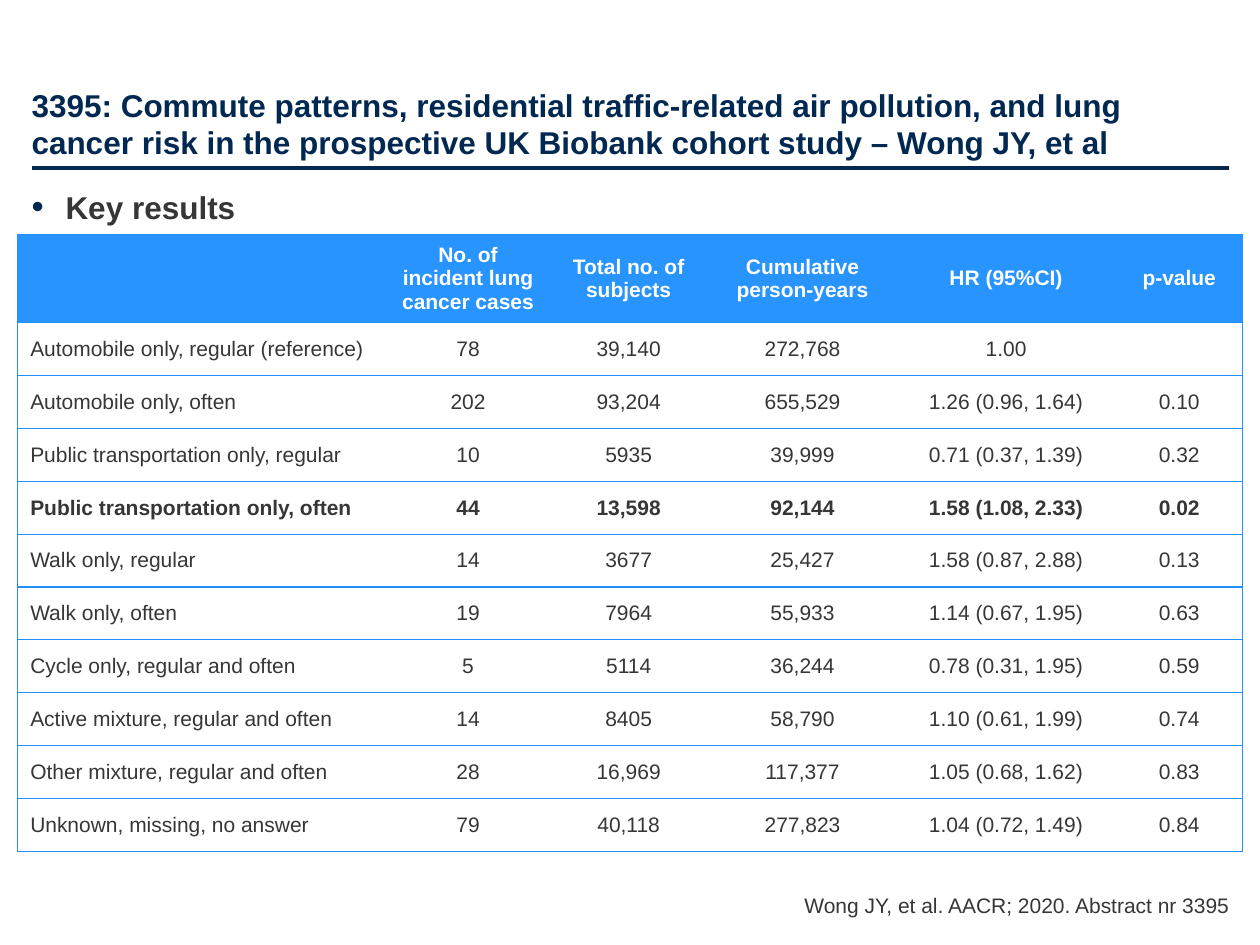
from lxml import etree
from pptx import Presentation
from pptx.dml.color import RGBColor
from pptx.enum.shapes import MSO_CONNECTOR
from pptx.enum.text import MSO_ANCHOR, MSO_AUTO_SIZE, PP_ALIGN
from pptx.oxml.ns import qn
from pptx.util import Inches, Pt

LEFT, CENTER, RIGHT = PP_ALIGN.LEFT, PP_ALIGN.CENTER, PP_ALIGN.RIGHT
TOP, MIDDLE, BOTTOM = MSO_ANCHOR.TOP, MSO_ANCHOR.MIDDLE, MSO_ANCHOR.BOTTOM
NO_FIT, GROW = MSO_AUTO_SIZE.NONE, MSO_AUTO_SIZE.SHAPE_TO_FIT_TEXT
STRAIGHT = MSO_CONNECTOR.STRAIGHT

COLORS = {"navy": "002850", "text": "363636", "header": "2894FF",
          "border": "2291FF", "white": "FFFFFF"}
FONT = "Arial"
PLAIN_TABLE_STYLE = "{2D5ABB26-0587-4C30-8999-92F81FD0307C}"
COLUMN_WIDTHS = [2.94, 1.27, 1.28, 1.48, 1.75, 1]
HEADER_HEIGHT, ROW_HEIGHT = 0.7, 0.42
HIGHLIGHTED_ROW = 4
RESULTS = [
    ["", "No. of incident lung cancer cases", "Total no. of subjects",
     "Cumulative person-years", "HR (95%CI)", "p-value"],
    ["Automobile only, regular (reference)", "78", "39,140", "272,768", "1.00", ""],
    ["Automobile only, often", "202", "93,204", "655,529", "1.26 (0.96, 1.64)", "0.10"],
    ["Public transportation only, regular", "10", "5935", "39,999", "0.71 (0.37, 1.39)", "0.32"],
    ["Public transportation only, often", "44", "13,598", "92,144", "1.58 (1.08, 2.33)", "0.02"],
    ["Walk only, regular", "14", "3677", "25,427", "1.58 (0.87, 2.88)", "0.13"],
    ["Walk only, often", "19", "7964", "55,933", "1.14 (0.67, 1.95)", "0.63"],
    ["Cycle only, regular and often", "5", "5114", "36,244", "0.78 (0.31, 1.95)", "0.59"],
    ["Active mixture, regular and often", "14", "8405", "58,790", "1.10 (0.61, 1.99)", "0.74"],
    ["Other mixture, regular and often", "28", "16,969", "117,377", "1.05 (0.68, 1.62)", "0.83"],
    ["Unknown, missing, no answer", "79", "40,118", "277,823", "1.04 (0.72, 1.49)", "0.84"],
]


def color(name):
    """Return the named colour."""
    return RGBColor.from_string(COLORS[name])


def write_text(frame, text, size=12, ink="text", bold=False, align=LEFT):
    """Write one formatted paragraph and return it."""
    paragraph = frame.paragraphs[0]
    paragraph.alignment = align
    paragraph.font.size = Pt(size)
    if text:
        run = paragraph.add_run()
        run.text = text
        run.font.name, run.font.size, run.font.bold = FONT, Pt(size), bold
        run.font.color.rgb = color(ink)
    return paragraph


def place(shape, left, top, width, height):
    """Move and size a shape, in inches."""
    shape.left, shape.top = Inches(left), Inches(top)
    shape.width, shape.height = Inches(width), Inches(height)


def set_frame(frame, anchor, inset_top=0, inset_bottom=0, wrap=True, fit=NO_FIT):
    """Set the anchor, insets, wrapping and fit of a text frame."""
    frame.margin_left = frame.margin_right = 0
    frame.margin_top, frame.margin_bottom = Inches(inset_top), Inches(inset_bottom)
    frame.vertical_anchor = anchor
    frame.word_wrap = wrap
    frame.auto_size = fit


def add_bullet(paragraph, indent):
    """Give a paragraph a hanging navy bullet."""
    properties = paragraph._p.get_or_add_pPr()
    properties.set("marL", str(Inches(indent)))
    properties.set("indent", str(-Inches(indent)))
    bullet_color = etree.SubElement(properties, qn("a:buClr"))
    etree.SubElement(bullet_color, qn("a:srgbClr"), val=COLORS["navy"])
    etree.SubElement(properties, qn("a:buSzPct"), val="110000")
    etree.SubElement(properties, qn("a:buFont"), typeface=FONT)
    etree.SubElement(properties, qn("a:buChar"), char="•")


def add_title(slide, text):
    """Fill the title placeholder and underline it with a rule."""
    title = slide.shapes.title
    place(title, 0.25, 0.25, 9.5, 1.03)
    set_frame(title.text_frame, BOTTOM, inset_top=0.05)
    write_text(title.text_frame, text, size=18, ink="navy", bold=True)
    rule = slide.shapes.add_connector(STRAIGHT, Inches(0.25), Inches(1.33),
                                      Inches(9.75), Inches(1.33))
    rule.line.color.rgb = color("navy")
    rule.line.width = Pt(2.25)
    etree.SubElement(rule._element.spPr, qn("a:effectLst"))


def add_body(slide, text):
    """Fill the body placeholder with one bullet."""
    body = slide.placeholders[1]
    place(body, 0.25, 1.44, 9.5, 5.81)
    set_frame(body.text_frame, TOP, inset_top=0.05, inset_bottom=0.05)
    paragraph = write_text(body.text_frame, text, size=18, bold=True)
    paragraph.space_before, paragraph.space_after = Pt(0), Pt(6)
    add_bullet(paragraph, 0.27)


def add_citation(slide, text):
    """Add the right-aligned source line."""
    box = slide.shapes.add_textbox(Inches(6.35), Inches(7.08), Inches(3.41), Inches(0.2))
    set_frame(box.text_frame, BOTTOM, wrap=False, fit=GROW)
    write_text(box.text_frame, text, align=RIGHT)


def set_borders(cell, sides):
    """Draw thin borders on the given sides of a cell."""
    properties = cell._tc.get_or_add_tcPr()
    for side in sides:
        line = etree.SubElement(properties, qn(f"a:ln{side}"), w=str(Pt(0.75)))
        fill = etree.SubElement(line, qn("a:solidFill"))
        etree.SubElement(fill, qn("a:srgbClr"), val=COLORS["border"])


def format_cell(cell, text, row, column):
    """Write, border and fill one results cell."""
    is_header = row == 0
    write_text(cell.text_frame, text, ink="white" if is_header else "text",
               bold=is_header or row == HIGHLIGHTED_ROW,
               align=CENTER if is_header or column else LEFT)
    cell.vertical_anchor = MIDDLE
    outer_side = {0: "L", len(COLUMN_WIDTHS) - 1: "R"}.get(column, "")
    set_borders(cell, outer_side + "TB")
    if is_header:
        cell.fill.solid()
        cell.fill.fore_color.rgb = color("header")
    else:
        cell.fill.background()


def add_results_table(slide):
    """Add the table of hazard ratios by commute pattern."""
    heights = [HEADER_HEIGHT] + [ROW_HEIGHT] * (len(RESULTS) - 1)
    frame = slide.shapes.add_table(
        len(RESULTS), len(COLUMN_WIDTHS), Inches(0.14), Inches(1.86),
        Inches(sum(COLUMN_WIDTHS)), Inches(sum(heights)))
    table = frame.table
    table.horz_banding = False
    table._tbl.tblPr.find(qn("a:tableStyleId")).text = PLAIN_TABLE_STYLE
    for column, width in zip(table.columns, COLUMN_WIDTHS):
        column.width = Inches(width)
    for row, height in zip(table.rows, heights):
        row.height = Inches(height)
    for row, values in enumerate(RESULTS):
        for column, text in enumerate(values):
            format_cell(table.cell(row, column), text, row, column)


def main():
    """Build and save the key results slide."""
    presentation = Presentation()
    presentation.slide_width, presentation.slide_height = Inches(10), Inches(7.5)
    slide = presentation.slides.add_slide(presentation.slide_layouts[1])
    add_title(slide, "3395: Commute patterns, residential traffic-related air pollution, "
                     "and lung cancer risk in the prospective UK Biobank cohort study "
                     "– Wong JY, et al")
    add_body(slide, "Key results")
    add_citation(slide, "Wong JY, et al. AACR; 2020. Abstract nr 3395")
    add_results_table(slide)
    presentation.save("out.pptx")


if __name__ == "__main__":
    main()
